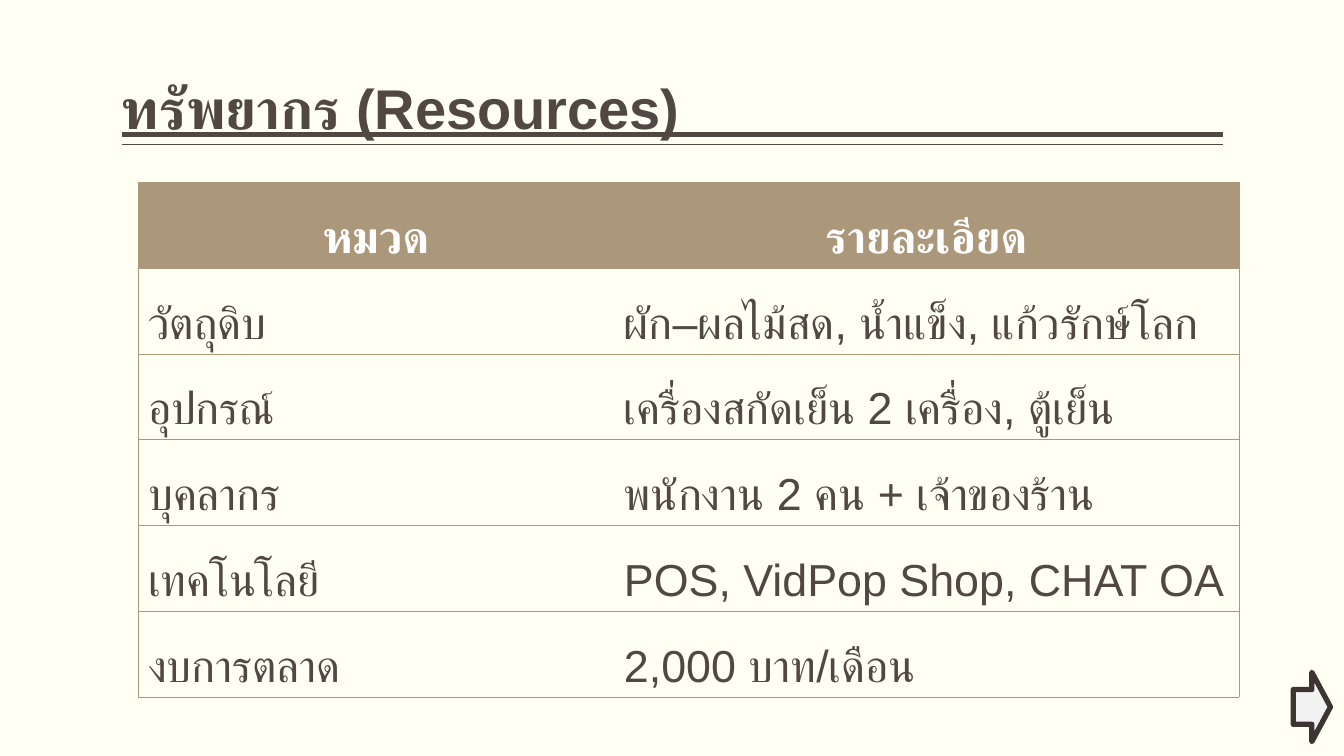
from lxml import etree
from pptx import Presentation
from pptx import util as u
from pptx.dml.color import RGBColor
from pptx.enum import shapes, text
from pptx.oxml.ns import qn

IVORY = RGBColor(0xFF, 0xFF, 0xF3)
BROWN = RGBColor(0x51, 0x48, 0x43)
TAN = RGBColor(0xAB, 0x97, 0x7A)
WHITE = RGBColor(0xFF, 0xFF, 0xFF)
PALE_GREY = RGBColor(0xF2, 0xF2, 0xF2)
DARK_BROWN = RGBColor(0x3C, 0x35, 0x32)
FONT = "Arial"

RESOURCES = [
    ("หมวด", "รายละเอียด"),
    ("วัตถุดิบ", "ผัก–ผลไม้สด, น้ำแข็ง, แก้วรักษ์โลก"),
    ("อุปกรณ์", "เครื่องสกัดเย็น 2 เครื่อง, ตู้เย็น"),
    ("บุคลากร", "พนักงาน 2 คน + เจ้าของร้าน"),
    ("เทคโนโลยี", "POS, VidPop Shop, CHAT OA"),
    ("งบการตลาด", "2,000 บาท/เดือน"),
]


def format_para(para, size, color, bold, spacing):
    para.line_spacing = spacing
    font = para.font
    font.name = FONT
    font.size = u.Pt(size)
    font.bold = bold
    font.color.rgb = color
    # Thai text takes its typeface from the complex-script font
    etree.SubElement(font._rPr, qn("a:cs"), typeface=FONT)


def add_heading(page, left, top, width, height):
    """Title resting on a thick and a thin rule."""
    bottom = top + height
    for offset, weight in ((0.3, 3), (0.05, 1)):
        y = bottom - u.Cm(offset)
        rule = page.shapes.add_connector(
            shapes.MSO_CONNECTOR.STRAIGHT, left, y, left + width, y)
        rule.line.color.rgb = BROWN
        rule.line.width = u.Pt(weight)
        etree.SubElement(rule._element.spPr, qn("a:effectLst"))

    title = page.shapes.title
    title.left, title.top, title.width, title.height = left, top, width, height
    frame = title.text_frame
    frame.text = "ทรัพยากร (Resources)"
    frame.word_wrap = True
    frame.auto_size = text.MSO_AUTO_SIZE.NONE
    frame.vertical_anchor = text.MSO_ANCHOR.BOTTOM
    frame.margin_left = frame.margin_right = 0
    para = frame.paragraphs[0]
    para.alignment = text.PP_ALIGN.LEFT
    format_para(para, 40, BROWN, True, 0.9)


def set_borders(cell, visible):
    """Draw the named sides in tan and hide the others."""
    props = cell._tc.get_or_add_tcPr()
    for index, side in enumerate(("L", "R", "T", "B")):
        line = etree.Element(qn(f"a:ln{side}"), w=str(u.Pt(0.5)))
        if side in visible:
            fill = etree.SubElement(line, qn("a:solidFill"))
            etree.SubElement(fill, qn("a:srgbClr"), val=str(TAN))
        else:
            etree.SubElement(line, qn("a:noFill"))
        props.insert(index, line)


def add_resource_table(page, left, top, width, height):
    rows, columns = len(RESOURCES), len(RESOURCES[0])
    table = page.shapes.add_table(rows, columns, left, top, width, height).table
    table.horz_banding = False
    table.columns[0].width = u.Cm(11.99)
    table.columns[1].width = width - u.Cm(11.99)
    for r, values in enumerate(RESOURCES):
        header = r == 0
        for c, value in enumerate(values):
            cell = table.cell(r, c)
            cell.text = value
            cell.vertical_anchor = text.MSO_ANCHOR.MIDDLE
            if header:
                cell.fill.solid()
                cell.fill.fore_color.rgb = TAN
            else:
                cell.fill.background()
            set_borders(cell, "TB" + "LR"[c])
            para = cell.text_frame.paragraphs[0]
            para.alignment = text.PP_ALIGN.CENTER if header else text.PP_ALIGN.LEFT
            format_para(para, 32, WHITE if header else BROWN, header, 1.5)


def add_next_arrow(page, left, top, width, height):
    arrow = page.shapes.add_shape(
        shapes.MSO_SHAPE.RIGHT_ARROW, left, top, width, height)
    arrow.shadow.inherit = False
    arrow.fill.solid()
    arrow.fill.fore_color.rgb = PALE_GREY
    arrow.line.color.rgb = DARK_BROWN
    arrow.line.width = u.Pt(3.78)


def main():
    deck = Presentation()
    deck.slide_width, deck.slide_height = u.Cm(33.87), u.Cm(19.05)
    page = deck.slides.add_slide(deck.slide_layouts[5])
    page.background.fill.solid()
    page.background.fill.fore_color.rgb = IVORY
    add_heading(page, u.Cm(3.07), u.Cm(0.64), u.Cm(27.74), u.Cm(3.05))
    add_resource_table(page, u.Cm(3.48), u.Cm(4.6), u.Cm(27.74), u.Cm(12.96))
    add_next_arrow(page, u.Cm(32.59), u.Cm(16.94), u.Cm(0.94), u.Cm(1.75))
    deck.save("out.pptx")


if __name__ == "__main__":
    main()
